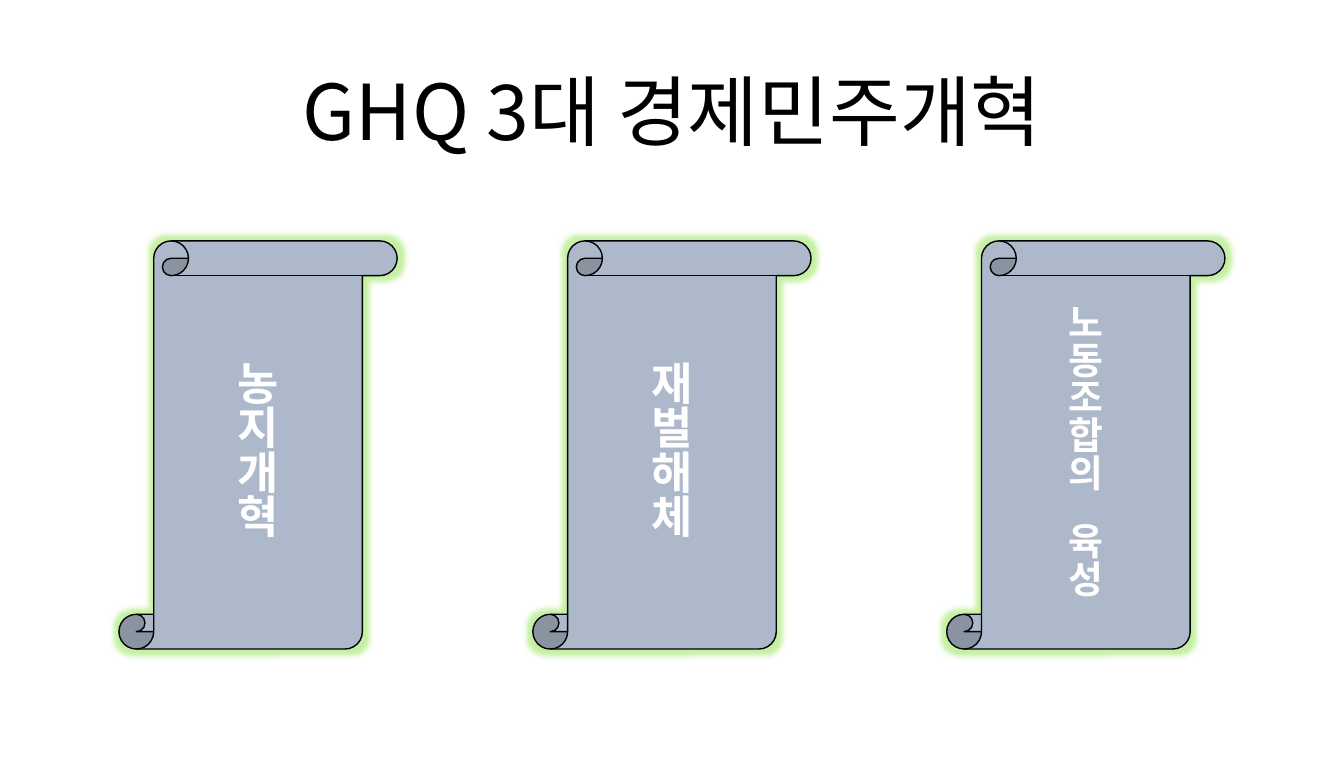
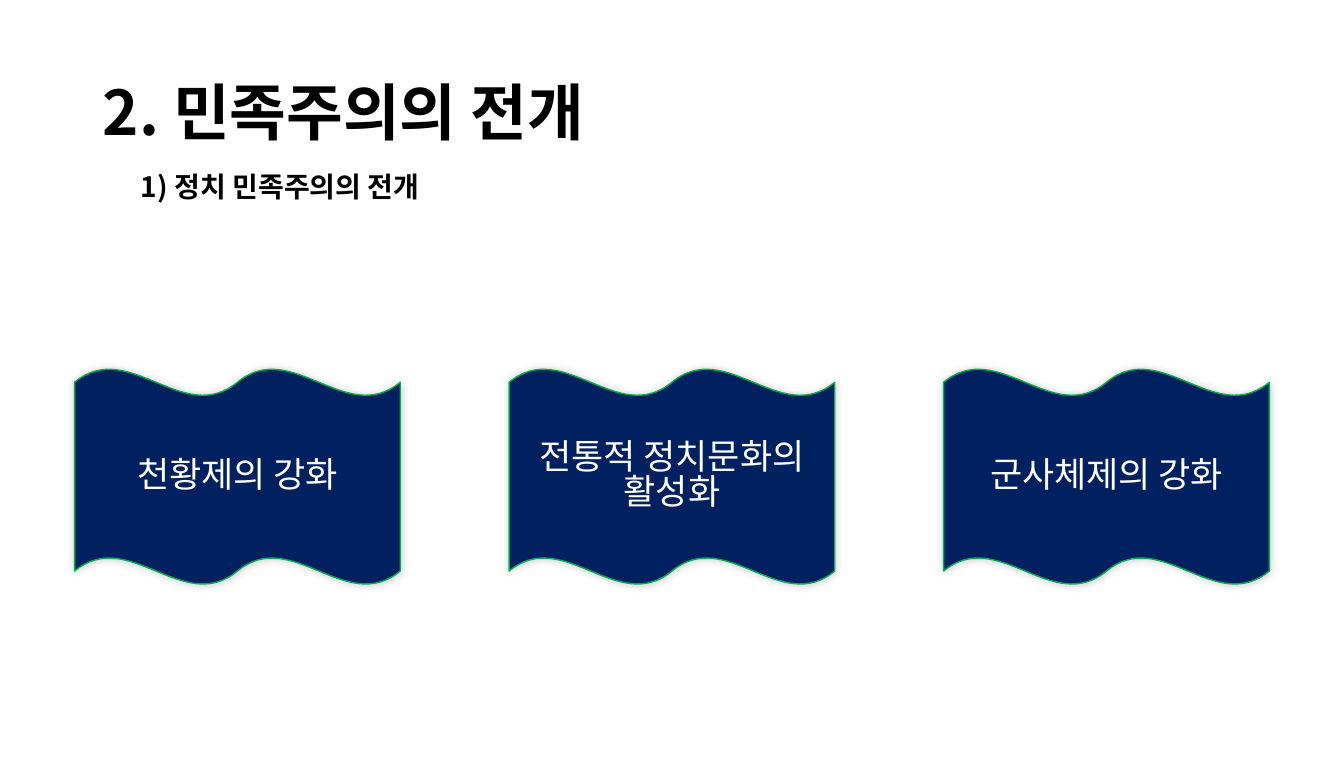
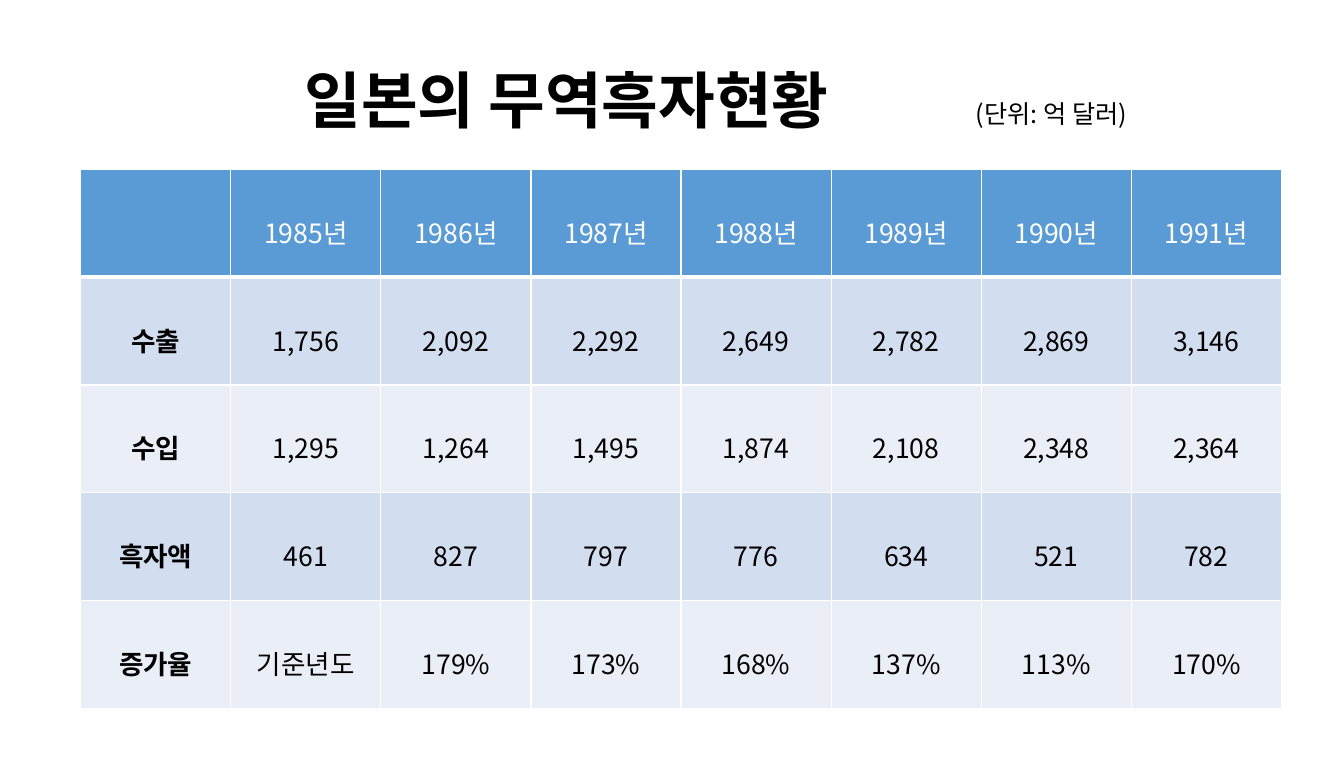
from lxml import etree
from pptx import Presentation
from pptx import util as u
from pptx.dml.color import RGBColor
from pptx.enum import shapes, text
from pptx.oxml.ns import qn

BLACK = RGBColor(0x00, 0x00, 0x00)
WHITE = RGBColor(0xFF, 0xFF, 0xFF)
SCROLL_FILL = RGBColor(0xAD, 0xB9, 0xCA)
GLOW = RGBColor(0x6F, 0xDB, 0x1A)
NAVY = RGBColor(0x00, 0x20, 0x60)
GREEN = RGBColor(0x00, 0xB0, 0x50)
HEADER_BLUE = RGBColor(0x5B, 0x9B, 0xD5)
BANDS = (RGBColor(0xD2, 0xDE, 0xEF), RGBColor(0xEA, 0xEF, 0xF7))

FONT = "Noto Sans CJK KR"
TITLE_AREA = (0.92, 0.41, 11.5, 1.48)
LEFT, CENTER = text.PP_ALIGN.LEFT, text.PP_ALIGN.CENTER
TIGHT = 0.83


def solid_fill(parent, color, alpha=None):
    """Append a colour, with opacity in percent, as XML."""
    clr = etree.SubElement(parent, qn("a:srgbClr"), val=str(color))
    if alpha is not None:
        etree.SubElement(clr, qn("a:alpha"), val=str(alpha * 1000))


class SlideBuilder:
    """Holds the shared style and the slide being built."""

    def __init__(self):
        self.deck = Presentation()
        self.deck.slide_width = u.Inches(13.33)
        self.deck.slide_height = u.Inches(7.68)
        self.page = None

    def new_slide(self):
        self.page = self.deck.slides.add_slide(self.deck.slide_layouts[5])

    def style(self, frame, size, color=BLACK, bold=False, align=LEFT, spacing=1.0):
        for para in frame.paragraphs:
            para.alignment = align
            para.line_spacing = spacing
            for span in para.runs:
                span.font.size = u.Pt(size)
                span.font.bold = bold
                span.font.color.rgb = color
                span.font.name = FONT
                # Hangul takes the East Asian typeface
                latin = span.font.element.find(qn("a:latin")) if hasattr(
                    span.font, "element") else span._r.rPr.find(qn("a:latin"))
                latin.addnext(etree.Element(qn("a:ea"), typeface=FONT))

    def title(self, words, size, bold=True, align=LEFT, area=TITLE_AREA):
        box = self.page.shapes.title
        box.left, box.top, box.width, box.height = map(u.Inches, area)
        frame = box.text_frame
        frame.text = words
        frame.word_wrap = True
        frame.auto_size = text.MSO_AUTO_SIZE.NONE
        frame.vertical_anchor = text.MSO_ANCHOR.MIDDLE
        self.style(frame, size, bold=bold, align=align, spacing=0.9)

    def label(self, words, size, area, bold=False):
        box = self.page.shapes.add_textbox(*map(u.Inches, area))
        box.text_frame.text = words
        box.text_frame.word_wrap = True
        self.style(box.text_frame, size, bold=bold)

    def panel(self, kind, area, words, size, fill, line, bold=False):
        """Add a filled preset shape with centred white text."""
        shape = self.page.shapes.add_shape(kind, *map(u.Inches, area))
        shape.shadow.inherit = False
        shape.fill.solid()
        shape.fill.fore_color.rgb = fill
        shape.line.color.rgb = line
        shape.line.width = u.Pt(1)
        frame = shape.text_frame
        frame.text = words
        frame.word_wrap = True
        frame.vertical_anchor = text.MSO_ANCHOR.MIDDLE
        self.style(frame, size, WHITE, bold, CENTER, TIGHT)
        return shape

    def effect(self, shape, name, color, alpha, **settings):
        effects = shape.element.spPr.find(qn("a:effectLst"))
        solid_fill(etree.SubElement(effects, qn(name), **settings), color, alpha)

    def scroll(self, left, phrase, size):
        """Write a phrase downwards, one syllable a line, on a scroll."""
        words = phrase.split()
        shape = self.panel(shapes.MSO_SHAPE.VERTICAL_SCROLL, (left, 2.39, 2.76, 4.05),
                           "\n".join("".join(words)), size, SCROLL_FILL, BLACK, bold=True)
        start = 0
        for word in words[:-1]:
            start += len(word)
            shape.text_frame.paragraphs[start].space_before = u.Pt(22)
        self.effect(shape, "a:glow", GLOW, 40, rad=str(u.Pt(8)))

    def wave(self, left, words):
        shape = self.panel(shapes.MSO_SHAPE.DOUBLE_WAVE, (left, 3.66, 3.23, 2.14),
                           words, 25, NAVY, GREEN)
        self.effect(shape, "a:outerShdw", BLACK, 20, blurRad=str(u.Pt(6)),
                    dist="0", dir="18900000", algn="ctr", rotWithShape="0")

    def borders(self, cell, bottom):
        props = cell._tc.get_or_add_tcPr()
        for index, (side, width) in enumerate(
                (("L", 1), ("R", 1), ("T", 1), ("B", bottom))):
            line = etree.Element(qn(f"a:ln{side}"), w=str(u.Pt(width)))
            solid_fill(etree.SubElement(line, qn("a:solidFill")), WHITE)
            props.insert(index, line)

    def table(self, rows, area):
        table = self.page.shapes.add_table(
            len(rows), len(rows[0]), *map(u.Inches, area)).table
        table.first_row = table.horz_banding = False
        for r, row in enumerate(rows):
            header = r == 0
            for c, words in enumerate(row):
                cell = table.cell(r, c)
                cell.text = words
                cell.margin_top = u.Inches(0.43)
                cell.fill.solid()
                cell.fill.fore_color.rgb = HEADER_BLUE if header else BANDS[(r - 1) % 2]
                self.borders(cell, 3 if header else 1)
                self.style(cell.text_frame, 19, WHITE if header else BLACK,
                           bold=c == 0, align=CENTER)


def main():
    show = SlideBuilder()

    # Three economic reforms
    show.new_slide()
    show.title("GHQ 3대 경제민주개혁", 55, bold=False, align=CENTER)
    reforms = (("농지개혁", 32), ("재벌해체", 32), ("노동조합의 육성", 27))
    for i, (phrase, size) in enumerate(reforms):
        show.scroll(1.18 + 4.105 * i, phrase, size)

    # Political nationalism
    show.new_slide()
    show.title("2. 민족주의의 전개", 44)
    show.label("1) 정치 민족주의의 전개", 20, (1.3, 1.63, 3.62, 0.45), bold=True)
    trends = ("천황제의 강화", "전통적 정치문화의 활성화", "군사체제의 강화")
    for i, words in enumerate(trends):
        show.wave(0.74 + 4.31 * i, words)

    # Trade surplus table
    show.new_slide()
    show.table([
        [""] + [f"{year}년" for year in range(1985, 1992)],
        ["수출", "1,756", "2,092", "2,292", "2,649", "2,782", "2,869", "3,146"],
        ["수입", "1,295", "1,264", "1,495", "1,874", "2,108", "2,348", "2,364"],
        ["흑자액", "461", "827", "797", "776", "634", "521", "782"],
        ["증가율", "기준년도", "179%", "173%", "168%", "137%", "113%", "170%"],
    ], (0.8, 1.68, 11.91, 5.35))
    show.title("일본의 무역흑자현황", 44, area=(2.92, 0.51, 6.6, 1.04))
    show.label("(단위: 억 달러)", 18, (9.58, 0.93, 3.13, 0.45))

    show.deck.save("out.pptx")


if __name__ == "__main__":
    main()
